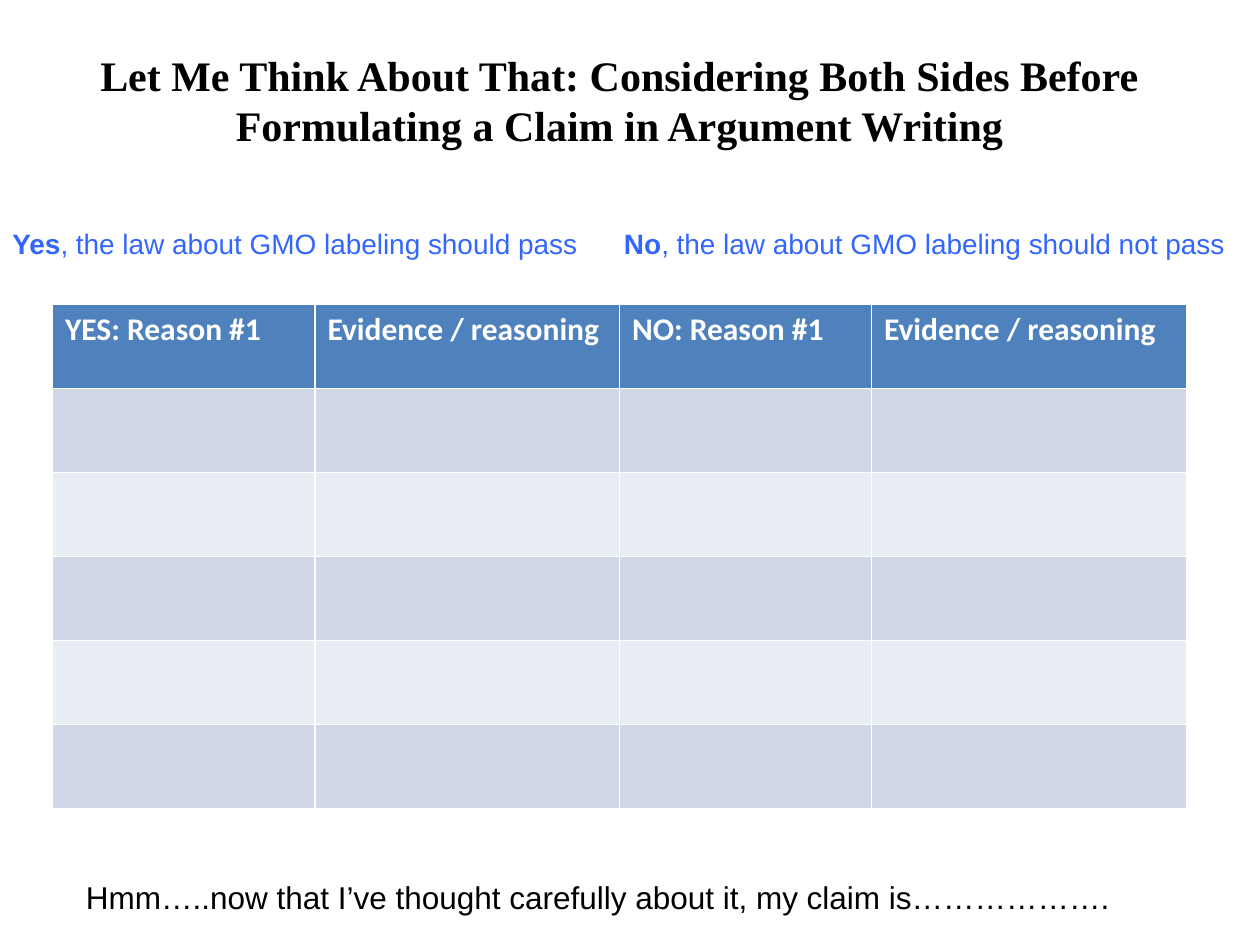
from dataclasses import dataclass

from lxml import etree
from pptx import Presentation
from pptx.dml.color import RGBColor
from pptx.enum.text import MSO_ANCHOR, MSO_AUTO_SIZE, PP_ALIGN
from pptx.oxml.ns import qn
from pptx.util import Pt

CENTER = PP_ALIGN.CENTER
MIDDLE = MSO_ANCHOR.MIDDLE
NO_AUTOFIT = MSO_AUTO_SIZE.NONE
TITLE_ONLY = 5


@dataclass(frozen=True)
class Theme:
    title_font: str = "Times New Roman"
    body_font: str = "Arial"
    table_font: str = "Calibri"
    title_size: int = 24
    sides_size: int = 16
    text_size: int = 18
    ink: str = "000000"
    sides: str = "3366FF"
    header_text: str = "FFFFFF"
    header_fill: str = "4F81BD"
    bands: tuple = ("D0D8E8", "E9EDF4")


THEME = Theme()

SIDES = (
    ("Yes", ", the law about GMO labeling should pass"),
    ("No", ", the law about GMO labeling should not pass"),
)
HEADERS = ("YES: Reason #1", "Evidence / reasoning",
           "NO: Reason #1", "Evidence / reasoning")
COLUMN_WIDTHS = (150, 174, 144, 180)
BLANK_ROWS = 5


def style(font, name, size, color, bold=None):
    font.name = name
    font.size = Pt(size)
    font.color.rgb = RGBColor.from_string(color)
    font.bold = bold


def add_title(slide, left, top, width, height):
    title = slide.shapes.title
    title.left, title.top = Pt(left), Pt(top)
    title.width, title.height = Pt(width), Pt(height)
    frame = title.text_frame
    frame.text = ("Let Me Think About That: Considering Both Sides Before "
                  "Formulating a Claim in Argument Writing")
    frame.auto_size = NO_AUTOFIT
    frame.vertical_anchor = MIDDLE
    heading = frame.paragraphs[0]
    heading.alignment = CENTER
    style(heading.font, THEME.title_font, THEME.title_size, THEME.ink, True)


def add_line(slide, left, top, width, height):
    """Add a wrapping text box and return its only paragraph."""
    box = slide.shapes.add_textbox(Pt(left), Pt(top), Pt(width), Pt(height))
    box.text_frame.word_wrap = True
    return box.text_frame.paragraphs[0]


def add_sides(slide, left, top, width, height):
    """Set both positions on one line, the second at a tab stop."""
    line = add_line(slide, left, top, width, height)
    style(line.font, THEME.body_font, THEME.sides_size, THEME.sides)
    tabs = etree.Element(qn("a:tabLst"))
    etree.SubElement(tabs, qn("a:tab"), pos=str(Pt(349.5)), algn="l")
    line._p.get_or_add_pPr().insert(0, tabs)
    for index, (answer, position) in enumerate(SIDES):
        if index:
            line.add_run().text = "\t"
        answer_run = line.add_run()
        answer_run.text = answer
        answer_run.font.bold = True
        line.add_run().text = position


def add_reasons_table(slide, left, top, width, height):
    rows = BLANK_ROWS + 1
    table = slide.shapes.add_table(rows, len(HEADERS), Pt(left), Pt(top),
                                   Pt(width), Pt(height)).table
    for column, column_width in zip(table.columns, COLUMN_WIDTHS):
        column.width = Pt(column_width)
    for index, row in enumerate(table.rows):
        fill = THEME.bands[(index - 1) % 2] if index else THEME.header_fill
        for cell in row.cells:
            cell.fill.solid()
            cell.fill.fore_color.rgb = RGBColor.from_string(fill)
    for cell, header in zip(table.rows[0].cells, HEADERS):
        cell.text = header
        style(cell.text_frame.paragraphs[0].font, THEME.table_font,
              THEME.text_size, THEME.header_text, True)


def add_claim(slide, left, top, width, height):
    claim = add_line(slide, left, top, width, height)
    claim.text = ("Hmm…..now that I’ve thought carefully about it, "
                  "my claim is……………….")
    style(claim.font, THEME.body_font, THEME.text_size, THEME.ink)


def main():
    deck = Presentation()
    deck.slide_width, deck.slide_height = Pt(720), Pt(540)
    slide = deck.slides.add_slide(deck.slide_layouts[TITLE_ONLY])
    add_title(slide, 24, 24, 660, 66)
    add_sides(slide, 0, 126, 720, 26.64)
    add_reasons_table(slide, 30, 174, sum(COLUMN_WIDTHS), 288)
    add_claim(slide, 42, 498, 636, 29)
    deck.save("out.pptx")


if __name__ == "__main__":
    main()
